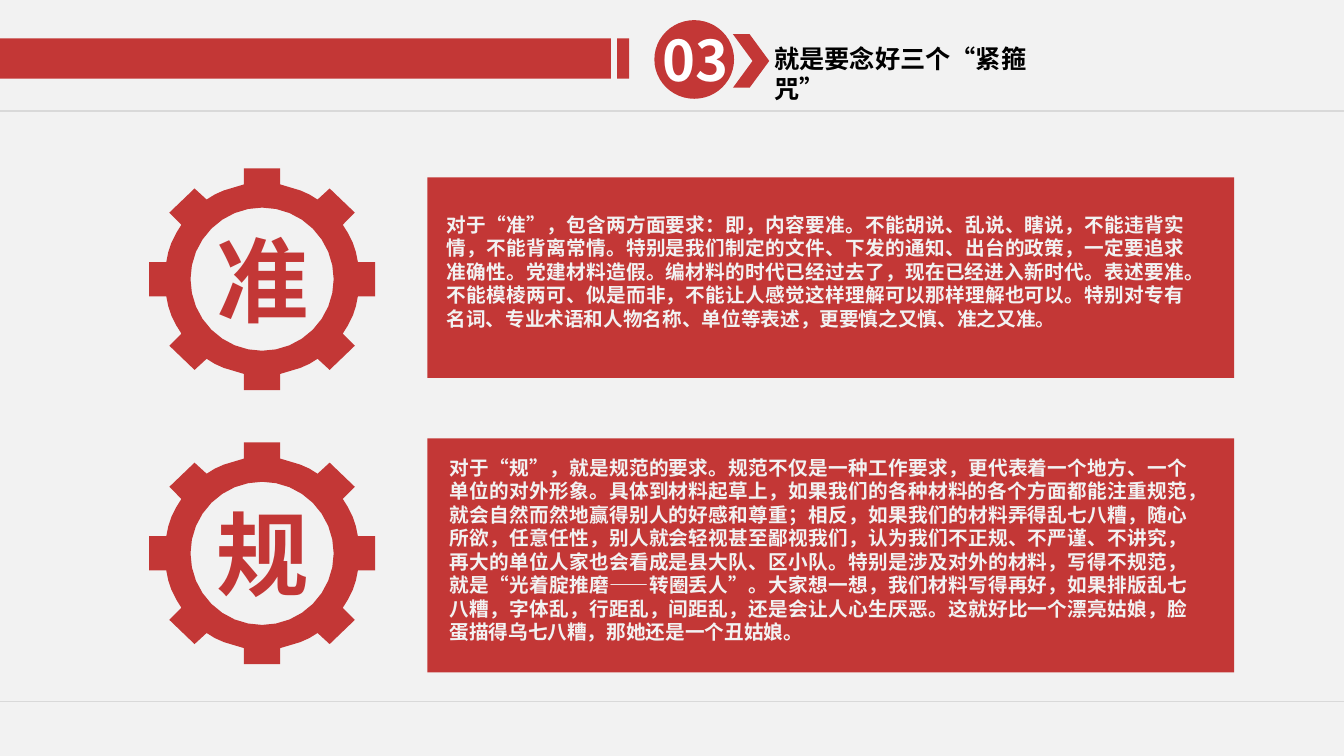
import math

import pptx
import pptx.util
import pptx.dml.color
import pptx.enum.shapes
import pptx.enum.text
import pptx.oxml.ns
import lxml.etree

Inches = pptx.util.Inches
RGBColor = pptx.dml.color.RGBColor
SHAPE = pptx.enum.shapes.MSO_SHAPE
ALIGN = pptx.enum.text.PP_ALIGN

RED = RGBColor(0xC3, 0x37, 0x36)
PAPER = RGBColor(0xF2, 0xF2, 0xF2)
RULE = RGBColor(0xD9, 0xD9, 0xD9)
BLACK = RGBColor(0, 0, 0)
WHITE = RGBColor(0xFF, 0xFF, 0xFF)
FONT = "Noto Sans CJK SC"

prs = pptx.Presentation()
prs.slide_width, prs.slide_height = Inches(13.33), Inches(7.5)
s = prs.slides.add_slide(prs.slide_layouts[5])
s.background.fill.solid()
s.background.fill.fore_color.rgb = PAPER


def paint(sp):
    sp.shadow.inherit = False
    sp.fill.solid()
    sp.fill.fore_color.rgb = RED
    sp.line.fill.background()


def write(sp, box, text, size, color, align):
    sp.left, sp.top, sp.width, sp.height = map(Inches, box)
    tf = sp.text_frame
    frame = {"word_wrap": True,
             "auto_size": pptx.enum.text.MSO_AUTO_SIZE.NONE,
             "vertical_anchor": pptx.enum.text.MSO_ANCHOR.TOP}
    for name, value in frame.items():
        setattr(tf, name, value)
    p = tf.paragraphs[0]
    p.alignment = align
    r = p.add_run()
    r.text = text
    for name, value in {"size": pptx.util.Pt(size), "bold": True, "name": FONT}.items():
        setattr(r.font, name, value)
    r.font.color.rgb = color
    # East Asian typeface
    ea = lxml.etree.SubElement(r.font._element, pptx.oxml.ns.qn("a:ea"))
    ea.set("typeface", FONT)


# Rules under the header and above the footer
for y in (1.1, 6.96):
    line = s.shapes.add_connector(pptx.enum.shapes.MSO_CONNECTOR.STRAIGHT,
                                  0, Inches(y), prs.slide_width, Inches(y))
    line.line.color.rgb = RULE
    line.line.width = pptx.util.Pt(1)
    lxml.etree.SubElement(line._element.spPr, pptx.oxml.ns.qn("a:effectLst"))

# Header bars, number disc, chevron and the two text panels
for kind, box in (
    (SHAPE.RECTANGLE, (0, 0.38, 6.06, 0.4)),
    (SHAPE.RECTANGLE, (6.12, 0.38, 0.12, 0.4)),
    (SHAPE.OVAL, (6.49, 0.2, 0.79, 0.78)),
    (SHAPE.CHEVRON, (7.27, 0.34, 0.36, 0.53)),
    (SHAPE.RECTANGLE, (4.24, 1.76, 8, 1.99)),
    (SHAPE.RECTANGLE, (4.24, 4.35, 8, 2.32)),
):
    sp = s.shapes.add_shape(kind, *map(Inches, box))
    paint(sp)
    if kind == SHAPE.CHEVRON:
        sp.adjustments[0] = 0.54

# Header text
write(s.shapes.add_textbox(0, 0, 0, 0), (5, 0.2, 2.32, 0.77), "03", 40, WHITE, ALIGN.RIGHT)
write(s.shapes.title, (7.58, 0.38, 3.03, 0.4), "就是要念好三个“紧箍咒”", 18, BLACK, ALIGN.LEFT)

# Gear outline: one quarter, mirrored into the other three
quarter = [(0.18, 1.1), (0.18, 0.94), (0.28, 0.91), (0.38, 0.88), (0.47, 0.84),
           (0.55, 0.79), (0.67, 0.9), (0.92, 0.66), (0.8, 0.54), (0.85, 0.46),
           (0.9, 0.36), (0.93, 0.27), (0.95, 0.17), (1.12, 0.17)]
half = quarter + [(x, -y) for x, y in reversed(quarter)]
rim = half + [(-x, y) for x, y in reversed(half)]
STEPS = 32
hole = [(0.71 * math.cos(2 * math.pi * i / STEPS), 0.71 * math.sin(2 * math.pi * i / STEPS))
        for i in range(STEPS)]

# Gears with their character and explanation
GEAR_X = 2.6
sections = [
    (2.77, "准", (4.33, 2.06, 7.52, 1.28),
     "对于“准”，包含两方面要求：即，内容要准。不能胡说、乱说、瞎说，不能违背实情，不能背离常情。"
     "特别是我们制定的文件、下发的通知、出台的政策，一定要追求准确性。党建材料造假。"
     "编材料的时代已经过去了，现在已经进入新时代。表述要准。不能模棱两可、似是而非，"
     "不能让人感觉这样理解可以那样理解也可以。特别对专有名词、专业术语和人物名称、单位等表述，"
     "更要慎之又慎、准之又准。"),
    (5.49, "规", (4.36, 4.47, 7.52, 1.99),
     "对于“规”，就是规范的要求。规范不仅是一种工作要求，更代表着一个地方、一个单位的对外形象。"
     "具体到材料起草上，如果我们的各种材料的各个方面都能注重规范，就会自然而然地赢得别人的好感和尊重；"
     "相反，如果我们的材料弄得乱七八糟，随心所欲，任意任性，别人就会轻视甚至鄙视我们，"
     "认为我们不正规、不严谨、不讲究，再大的单位人家也会看成是县大队、区小队。"
     "特别是涉及对外的材料，写得不规范，就是“光着腚推磨——转圈丢人”。"
     "大家想一想，我们材料写得再好，如果排版乱七八糟，字体乱，行距乱，间距乱，还是会让人心生厌恶。"
     "这就好比一个漂亮姑娘，脸蛋描得乌七八糟，那她还是一个丑姑娘。"),
]
for gear_y, word, box, text in sections:
    outer, inner = ([(Inches(GEAR_X + x), Inches(gear_y + y)) for x, y in ring]
                    for ring in (rim, hole))
    gear = s.shapes.build_freeform(*outer[0])
    gear.add_line_segments(outer[1:])
    gear.move_to(*inner[0])
    gear.add_line_segments(inner[1:])
    paint(gear.convert_to_shape())
    write(s.shapes.add_textbox(0, 0, 0, 0), (2, gear_y - 0.61, 1.22, 1.21),
          word, 66, RED, ALIGN.CENTER)
    write(s.shapes.add_textbox(0, 0, 0, 0), box, text, 14, PAPER, ALIGN.JUSTIFY)

prs.save("out.pptx")
